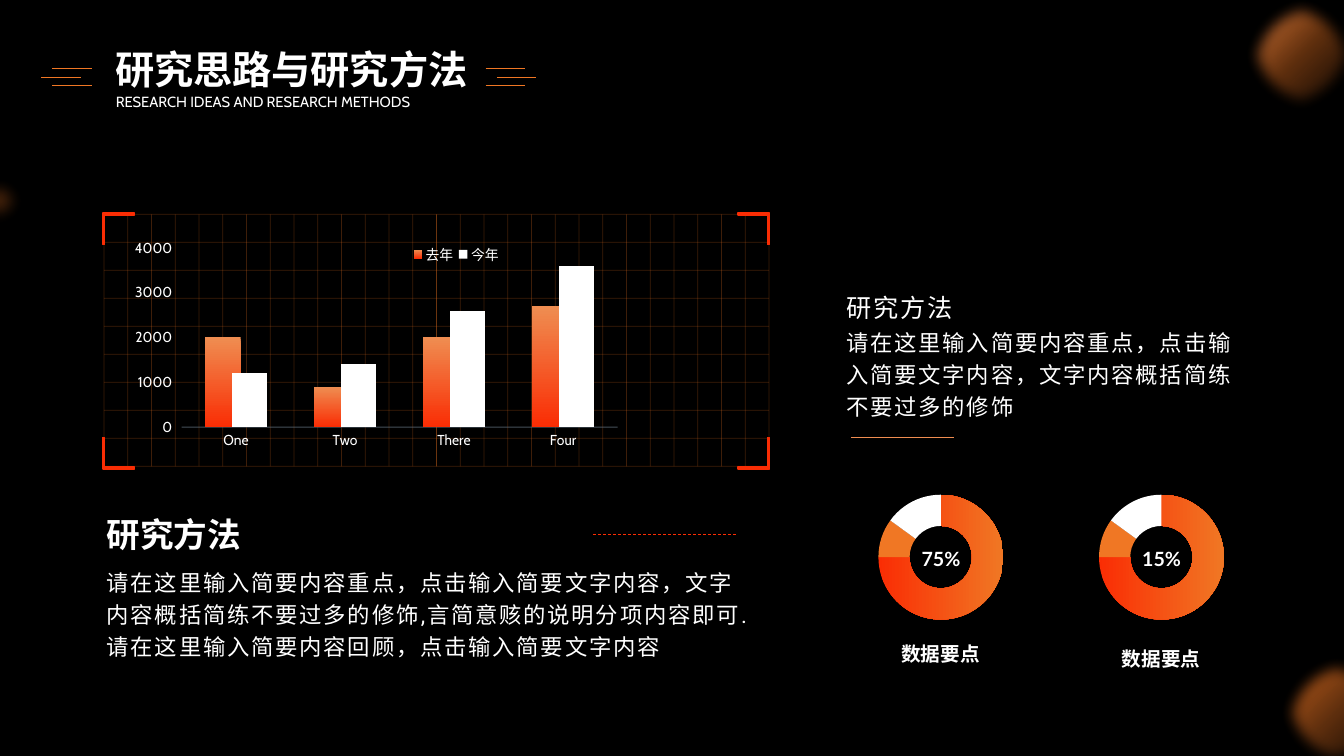
from lxml import etree
from pptx import Presentation
from pptx.chart.data import CategoryChartData
from pptx.dml.color import RGBColor
from pptx.enum.chart import XL_CHART_TYPE, XL_LEGEND_POSITION, XL_TICK_MARK
from pptx.enum.dml import MSO_LINE
from pptx.enum.lang import MSO_LANGUAGE_ID
from pptx.enum.shapes import MSO_CONNECTOR, MSO_SHAPE
from pptx.enum.text import MSO_ANCHOR, MSO_AUTO_SIZE, PP_ALIGN
from pptx.oxml.ns import qn
from pptx.util import Cm, Pt

BARS, RING = XL_CHART_TYPE.COLUMN_CLUSTERED, XL_CHART_TYPE.DOUGHNUT
OVAL, RECT = MSO_SHAPE.OVAL, MSO_SHAPE.RECTANGLE
CENTER, JUSTIFY, MIDDLE = PP_ALIGN.CENTER, PP_ALIGN.JUSTIFY, MSO_ANCHOR.MIDDLE
CHINESE, DASH = MSO_LANGUAGE_ID.SIMPLIFIED_CHINESE, MSO_LINE.DASH

COLORS = {"black": "000000", "white": "FFFFFF", "orange": "F07724",
          "peach": "EF8D51", "red": "FA2D04", "slate": "657380", "sand": "D09052"}

STYLES = {
    "title": {"size": Pt(28), "name": "Roboto", "bold": True},
    "english": {"size": Pt(10.5), "name": "Cabin"},
    "heading": {"size": Pt(24), "name": "Lato", "bold": True},
    "subhead": {"size": Pt(18), "name": "Lato"},
    "body": {"size": Pt(16), "name": "Roboto"},
    "label": {"size": Pt(14), "name": "Lato", "bold": True},
    "chart": {"size": Pt(10.5), "name": "Cabin"},
}


def rgb(name):
    return RGBColor.from_string(COLORS[name])


def style(font, kind):
    for key, value in STYLES[kind].items():
        setattr(font, key, value)
    font.color.rgb = rgb("white")


def fade(color, alpha):
    """Set the opacity, in percent, of a colour element."""
    etree.SubElement(color, qn("a:alpha")).set("val", str(alpha * 1000))


def grade(fill, stops, angle):
    """Fill with (position, colour, opacity) stops, turned clockwise."""
    fill.gradient()
    fill.gradient_angle = (360 - angle) % 360
    track = fill.gradient_stops[0]._gs.getparent()
    for old in list(track):
        track.remove(old)
    for pos, name, alpha in stops:
        stop = etree.SubElement(track, qn("a:gs"))
        stop.set("pos", str(pos * 1000))
        color = etree.SubElement(stop, qn("a:srgbClr"))
        color.set("val", COLORS[name])
        fade(color, alpha)


def add_orb(slide, x, y, size, stops):
    """Add a soft-edged glowing circle."""
    orb = slide.shapes.add_shape(OVAL, Cm(x), Cm(y), Cm(size), Cm(size))
    orb.shadow.inherit = False
    orb.line.fill.background()
    grade(orb.fill, stops, 45)
    effects = orb._element.spPr.find(qn("a:effectLst"))
    etree.SubElement(effects, qn("a:softEdge")).set("rad", str(Pt(10)))


def add_line(slide, x1, y1, x2, y2, color="orange", width=1, alpha=100, dash=None):
    line = slide.shapes.add_connector(
        MSO_CONNECTOR.STRAIGHT, Cm(x1), Cm(y1), Cm(x2), Cm(y2))
    line.line.color.rgb = rgb(color)
    line.line.width = Pt(width)
    line.line.dash_style = dash
    props = line._element.spPr
    fade(props.xpath(".//a:srgbClr")[0], alpha)
    etree.SubElement(props, qn("a:effectLst"))


def add_bar(slide, x, y, width, height):
    bar = slide.shapes.add_shape(RECT, Cm(x), Cm(y), Cm(width), Cm(height))
    bar.shadow.inherit = False
    bar.fill.solid()
    bar.fill.fore_color.rgb = bar.line.color.rgb = rgb("red")
    bar.line.width = Pt(1)


def write(shape, text, kind, align=None, anchor=None, inset=None,
          wrap=True, leading=None, track=None):
    frame = shape.text_frame
    frame.auto_size = MSO_AUTO_SIZE.NONE
    frame.word_wrap = wrap
    frame.vertical_anchor = anchor
    if inset is not None:
        for side in ("left", "top", "right", "bottom"):
            setattr(frame, "margin_" + side, Cm(inset))
    para = frame.paragraphs[0]
    para.alignment = align
    para.line_spacing = leading
    run = para.add_run()
    run.text = text
    style(run.font, kind)
    run.font.language_id = CHINESE
    if track:
        run.font._element.set("spc", str(track))


def add_text(slide, x, y, width, height, text, kind, **options):
    box = slide.shapes.add_textbox(Cm(x), Cm(y), Cm(width), Cm(height))
    write(box, text, kind, **options)


def place(parent, x, y, width, height, inner=False):
    """Give a plot area or legend a fixed place, in parts of the chart."""
    for old in parent.findall(qn("c:layout")):
        parent.remove(old)
    layout = etree.Element(qn("c:layout"))
    manual = etree.SubElement(layout, qn("c:manualLayout"))
    pairs = [("layoutTarget", "inner")] if inner else []
    pairs += [("xMode", "edge"), ("yMode", "edge"),
              ("x", x), ("y", y), ("w", width), ("h", height)]
    for tag, value in pairs:
        etree.SubElement(manual, qn("c:" + tag)).set("val", str(value))
    parent.insert(0 if inner else 1, layout)


def add_chart(slide, kind, x, y, width, height, cats, series):
    data = CategoryChartData()
    data.categories = cats
    for name, values in series:
        data.add_series(name, values)
    chart = slide.shapes.add_chart(
        kind, Cm(x), Cm(y), Cm(width), Cm(height), data).chart
    chart.has_title = chart.has_legend = False
    style(chart.font, "chart")
    return chart


def add_columns(slide):
    chart = add_chart(slide, BARS, 3.4, 5.87, 15.16, 5.46,
                      ["One", "Two", "There", "Four"],
                      [("去年", (2000, 900, 2000, 2700)),
                       ("今年", (1200, 1400, 2600, 3600))])
    place(chart._chartSpace.chart.plotArea, 0.02, 0.07, 0.77, 0.84, inner=True)
    plot = chart.plots[0]
    plot.gap_width, plot.overlap, plot.vary_by_categories = 132, 25, False
    last, this = plot.series
    grade(last.format.fill, [(0, "peach", 100), (100, "red", 100)], 90)
    this.format.fill.solid()
    this.format.fill.fore_color.rgb = rgb("white")
    cat, val = chart.category_axis, chart.value_axis
    cat.major_tick_mark = XL_TICK_MARK.NONE
    cat.format.line.color.rgb = rgb("slate")
    cat.format.line.width = Pt(0.75)
    fade(cat._element.xpath("c:spPr//a:srgbClr")[0], 71)
    val.minimum_scale, val.maximum_scale, val.major_unit = 0, 4000, 1000
    val.has_major_gridlines = False
    val.format.line.fill.background()
    for axis in (cat, val):
        style(axis.tick_labels.font, "chart")
    chart.has_legend = True
    chart.legend.position = XL_LEGEND_POSITION.TOP
    chart.legend.include_in_layout = False
    style(chart.legend.font, "chart")
    place(chart.legend._element, 0.42, 0.04, 0.17, 0.12)


def add_ring(slide, x, percent, label_y):
    chart = add_chart(slide, RING, x, 12.12, 4.14, 3.84,
                      ["1", "2", "3"], [("Series 1", (75, 10, 15))])
    place(chart._chartSpace.chart.plotArea, 0.12, 0.09, 0.76, 0.82, inner=True)
    chart._chartSpace.xpath(".//c:holeSize")[0].set("val", "57")
    series = chart.plots[0].series[0]
    series.format.line.color.rgb = rgb("sand")
    series.format.line.width = Pt(0.75)
    fills = [series.points[i].format.fill for i in range(3)]
    grade(fills[0], [(0, "red", 100), (100, "orange", 100)], 0)
    for fill, name in zip(fills[1:], ("orange", "white")):
        fill.solid()
        fill.fore_color.rgb = rgb(name)
    add_text(slide, x + 1.16, 13.82, 1.83, 0.51, percent, "label",
             align=CENTER, anchor=MIDDLE, inset=0.1)
    add_text(slide, x + 0.81, label_y, 2.51, 0.86, "数据要点", "label",
             align=CENTER, wrap=False)


def add_panel(slide):
    """Draw the two halves of the grid and the corner brackets."""
    top, width, height, cols, rows = 5.4, 8.38, 6.35, 14, 9
    for left in (2.62, 11):
        for i in range(cols + 1):
            x = left + i * width / cols
            add_line(slide, x, top, x, top + height, width=0.5, alpha=25)
        for i in range(rows + 1):
            y = top + i * height / rows
            add_line(slide, left, y, left + width, y, width=0.5, alpha=25)
    for side, arm in ((2.59, 2.6), (19.34, 18.6)):
        for y, edge in ((5.38, 5.37), (11.02, 11.77)):
            add_bar(slide, side, y, 0.05, 0.79)
            add_bar(slide, arm, edge, 0.79, 0.05)


def add_head(slide):
    title = slide.shapes.title
    title.left, title.top, title.width, title.height = (
        Cm(2.54), Cm(1.09), Cm(9.6), Cm(1.3))
    write(title, "研究思路与研究方法", "title", align=CENTER, anchor=MIDDLE,
          inset=0, wrap=False)
    add_text(slide, 2.92, 2.34, 8.89, 0.46, "RESEARCH IDEAS AND RESEARCH METHODS",
             "english", align=JUSTIFY, anchor=MIDDLE, inset=0)
    for outer, inner in ((1.04, 1.32), (12.52, 12.24)):
        for x, y in ((outer, 1.95), (inner, 1.73), (inner, 2.16)):
            add_line(slide, x, y, x + 0.99, y)


def main():
    deck = Presentation()
    deck.slide_width, deck.slide_height = Cm(33.87), Cm(19.05)
    slide = deck.slides.add_slide(deck.slide_layouts[5])
    slide.background.fill.solid()
    slide.background.fill.fore_color.rgb = rgb("black")

    tail = [(49, "orange", 40), (95, "orange", 0)]
    add_orb(slide, -0.76, 4.32, 1.55, [(0, "orange", 55), (100, "orange", 0)])
    add_orb(slide, 32.2, 16.48, 3, [(0, "orange", 90)] + tail)
    add_orb(slide, 31.32, -0.1, 3, [(0, "peach", 100)] + tail)
    add_head(slide)
    add_panel(slide)
    add_columns(slide)

    brief = "请在这里输入简要内容重点，点击输入简要文字内容，文字内容概括简练不要过多的修饰"
    more = ",言简意赅的说明分项内容即可.请在这里输入简要内容回顾，点击输入简要文字内容"
    loose = {"leading": 1.2, "track": 130}
    add_text(slide, 2.44, 12.83, 8.38, 1.27, "研究方法", "heading")
    add_text(slide, 2.44, 14.07, 16.84, 2.49, brief + more, "body", **loose)
    add_text(slide, 21.08, 7.09, 6.17, 0.99, "研究方法", "subhead", **loose)
    add_text(slide, 21.08, 8.03, 10.85, 2.69, brief, "body", **loose)
    add_line(slide, 21.44, 11.02, 24.05, 11.02, "peach")
    add_line(slide, 14.94, 13.46, 18.57, 13.46, "red", 0.5, dash=DASH)

    add_ring(slide, 21.64, "75%", 16.05)
    add_ring(slide, 27.2, "15%", 16.18)
    deck.save("out.pptx")


if __name__ == "__main__":
    main()
